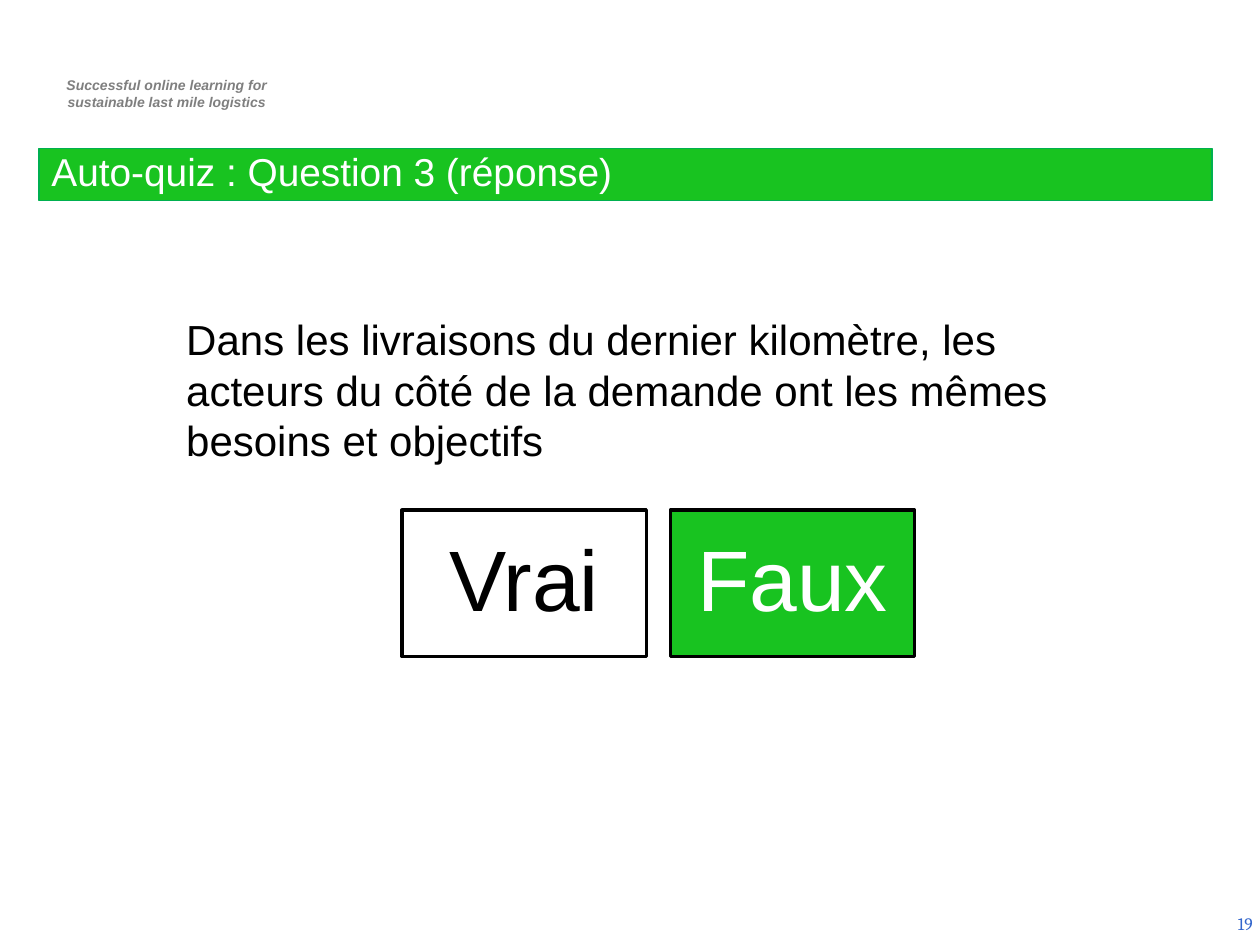
from pptx import Presentation, util as u
from pptx.dml.color import RGBColor
from pptx.enum import shapes, text

W, H = 10, 7.5
COLORS = {"green": "18C320", "edge": "00B050", "black": "000000",
          "white": "FFFFFF", "grey": "7F7F7F", "blue": "3366CC"}
LEFT, CENTER, RIGHT = text.PP_ALIGN.LEFT, text.PP_ALIGN.CENTER, text.PP_ALIGN.RIGHT
TOP, MIDDLE, BOTTOM = text.MSO_ANCHOR.TOP, text.MSO_ANCHOR.MIDDLE, text.MSO_ANCHOR.BOTTOM

TAGLINE = ["Successful online learning for", "sustainable last mile logistics"]
TITLE = "Auto-quiz : Question 3 (réponse)"
QUESTION = ("Dans les livraisons du dernier kilomètre, les acteurs du côté "
            "de la demande ont les mêmes besoins et objectifs")
ANSWERS = [("Vrai", "white", "black"), ("Faux", "green", "white")]
PAGE = "19"

ANSWER_LEFT, ANSWER_TOP = 3.19, 0.54 * H
ANSWER_W, ANSWER_H, ANSWER_GAP = 1.94, 1.16, 0.19


def rgb(name):
    return RGBColor.from_string(COLORS[name])


def write(sp, lines, size, color, align=LEFT, anchor=TOP, font="Arial",
          spacing=1.0, pad=(0.1, 0.05), indent=0, emphasis=False):
    tf = sp.text_frame
    tf.word_wrap = True
    tf.vertical_anchor = anchor
    tf.margin_left = tf.margin_right = u.Inches(pad[0])
    tf.margin_top = tf.margin_bottom = u.Inches(pad[1])
    for i, line in enumerate(lines):
        p = tf.add_paragraph() if i else tf.paragraphs[0]
        p.alignment, p.line_spacing = align, spacing
        if indent:
            p._p.get_or_add_pPr().set("marL", str(u.Inches(indent)))
        r = p.add_run()
        r.text = line
        r.font.name, r.font.size = font, u.Pt(size)
        r.font.color.rgb = rgb(color)
        r.font.bold = r.font.italic = emphasis


def add_text(s, box, *args, **style):
    write(s.shapes.add_textbox(*map(u.Inches, box)), *args, **style)


def add_panel(s, box, fill, line, width, *args, **style):
    sp = s.shapes.add_shape(shapes.MSO_SHAPE.RECTANGLE, *map(u.Inches, box))
    sp.shadow.inherit = False
    sp.fill.solid()
    sp.fill.fore_color.rgb = rgb(fill)
    sp.line.color.rgb = rgb(line)
    sp.line.width = u.Pt(width)
    write(sp, *args, **style)


def main():
    prs = Presentation()
    prs.slide_width, prs.slide_height = u.Inches(W), u.Inches(H)
    s = prs.slides.add_slide(prs.slide_layouts[6])

    add_text(s, (0.29, 0.56, 2.03, 0.37), TAGLINE, 8, "grey",
             align=CENTER, indent=0.04, emphasis=True)
    add_text(s, (7.71, 7.13, 2.33, 0.4), [PAGE], 10, "blue",
             align=RIGHT, anchor=MIDDLE, font="Cambria")
    add_panel(s, (0.31, 1.18, 9.31, 0.41), "green", "edge", 0.75,
              [TITLE], 22.2, "white", anchor=BOTTOM, spacing=0.8)
    add_text(s, (1.38, 2.44, 7.4, 1.72), [QUESTION], 24, "black")

    for i, (word, fill, color) in enumerate(ANSWERS):
        left = ANSWER_LEFT + i * (ANSWER_W + ANSWER_GAP)
        add_panel(s, (left, ANSWER_TOP, ANSWER_W, ANSWER_H), fill, "black", 2,
                  [word], 49, color, align=CENTER, anchor=MIDDLE,
                  spacing=0.9, pad=(0.2, 0.2))

    prs.save("out.pptx")


if __name__ == "__main__":
    main()
